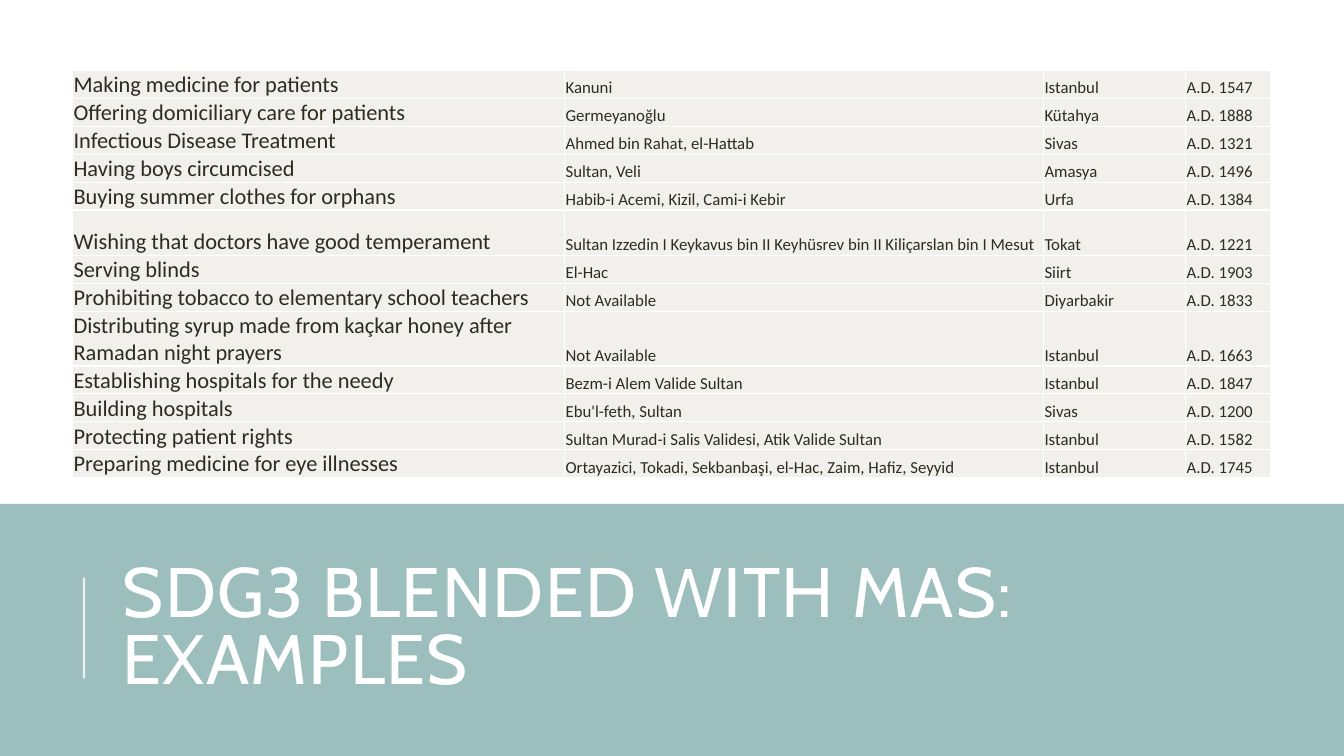
from lxml import etree
from pptx import Presentation, util as u
from pptx.dml.color import RGBColor
from pptx.enum import shapes, text
from pptx.oxml import parse_xml
from pptx.oxml.ns import nsdecls, qn

THEME = {
    "band": RGBColor.from_string("9CBEBD"),
    "light": RGBColor.from_string("FFFFFF"),
    "cell": RGBColor.from_string("F1F0EC"),
    "ink": RGBColor.from_string("2E2B21"),
    "title_font": "Cabin", "body_font": "Calibri",
    "title": u.Pt(50), "deed": u.Pt(16), "detail": u.Pt(12),
}

ROWS = [
    ("Making medicine for patients", "Kanuni", "Istanbul", 1547),
    ("Offering domiciliary care for patients", "Germeyanoğlu", "Kütahya", 1888),
    ("Infectious Disease Treatment", "Ahmed bin Rahat, el-Hattab", "Sivas", 1321),
    ("Having boys circumcised", "Sultan, Veli", "Amasya", 1496),
    ("Buying summer clothes for orphans", "Habib-i Acemi, Kizil, Cami-i Kebir", "Urfa", 1384),
    ("Wishing that doctors have good temperament",
     "Sultan Izzedin I Keykavus bin II Keyhüsrev bin II Kiliçarslan bin I Mesut", "Tokat", 1221),
    ("Serving blinds", "El-Hac", "Siirt", 1903),
    ("Prohibiting tobacco to elementary school teachers", "Not Available", "Diyarbakir", 1833),
    ("Distributing syrup made from kaçkar honey after Ramadan night prayers",
     "Not Available", "Istanbul", 1663),
    ("Establishing hospitals for the needy", "Bezm-i Alem Valide Sultan", "Istanbul", 1847),
    ("Building hospitals", "Ebu'l-feth, Sultan", "Sivas", 1200),
    ("Protecting patient rights", "Sultan Murad-i Salis Validesi, Atik Valide Sultan", "Istanbul", 1582),
    ("Preparing medicine for eye illnesses",
     "Ortayazici, Tokadi, Sekbanbaşi, el-Hac, Zaim, Hafiz, Seyyid", "Istanbul", 1745),
]
COLS = [4.88, 4.75, 1.41, 0.84]
TALL_ROWS = {5, 8}


def format_run(r, font, size, color):
    r.font.name, r.font.size = font, size
    r.font.color.rgb = color


prs = Presentation()
prs.slide_width, prs.slide_height = u.Inches(13.33), u.Inches(7.5)
W, H = prs.slide_width, prs.slide_height
s = prs.slides.add_slide(prs.slide_layouts[6])

# Title band across the lower third
band_top = H * 2 // 3
sp = s.shapes.add_shape(shapes.MSO_SHAPE.RECTANGLE, 0, band_top, W, H - band_top)
sp.shadow.inherit = False
sp.fill.solid()
sp.fill.fore_color.rgb = THEME["band"]
sp.line.fill.background()

# Title
sp = s.shapes.add_textbox(u.Inches(1.12), u.Inches(5.44), u.Inches(10.63), u.Inches(1.64))
tf = sp.text_frame
tf.word_wrap = True
tf.vertical_anchor = text.MSO_ANCHOR.MIDDLE
p = tf.paragraphs[0]
p.text = "SDG3 BLENDED WITH MAS: EXAMPLES"
p.line_spacing = 0.8
r = p.runs[0]
format_run(r, THEME["title_font"], THEME["title"], THEME["light"])
r.font._element.set("spc", "100")

# Translucent rule beside the title
rule_x = W // 16
rule = s.shapes.add_connector(shapes.MSO_CONNECTOR.STRAIGHT, rule_x, u.Inches(6.73), rule_x, u.Inches(5.73))
rule.line.color.rgb = THEME["light"]
rule.line.width = u.Pt(1.5)
color = rule.line._ln.find(".//" + qn("a:srgbClr"))
etree.SubElement(color, qn("a:alpha"), val="80000")
etree.SubElement(rule._element.spPr, qn("a:effectLst"))

# Table of examples
table = s.shapes.add_table(len(ROWS), len(COLS), u.Inches(0.72), u.Inches(0.7),
                           u.Inches(sum(COLS)), u.Inches(4)).table
table.first_row = table.horz_banding = False
for column, width in zip(table.columns, COLS):
    column.width = u.Inches(width)

for i, (deed, founder, city, year) in enumerate(ROWS):
    table.rows[i].height = u.Inches(0.45 if i in TALL_ROWS else 0.25)
    for j, value in enumerate((deed, founder, city, f"A.D. {year}")):
        cell = table.cell(i, j)
        cell.margin_left = cell.margin_right = cell.margin_top = u.Inches(0.01)
        cell.margin_bottom = 0
        cell.vertical_anchor = text.MSO_ANCHOR.BOTTOM
        cell.text_frame.text = value
        r = cell.text_frame.paragraphs[0].runs[0]
        format_run(r, THEME["body_font"], THEME["detail" if j else "deed"], THEME["ink"])

        # Borders precede the fill in the cell properties
        tcPr = cell._tc.get_or_add_tcPr()
        for side in ("lnL", "lnR", "lnT", "lnB"):
            tcPr.append(parse_xml(
                f'<a:{side} {nsdecls("a")} w="{u.Pt(1)}"><a:solidFill>'
                f'<a:srgbClr val="{THEME["light"]}"/></a:solidFill></a:{side}>'))
        cell.fill.solid()
        cell.fill.fore_color.rgb = THEME["cell"]

prs.save("out.pptx")
